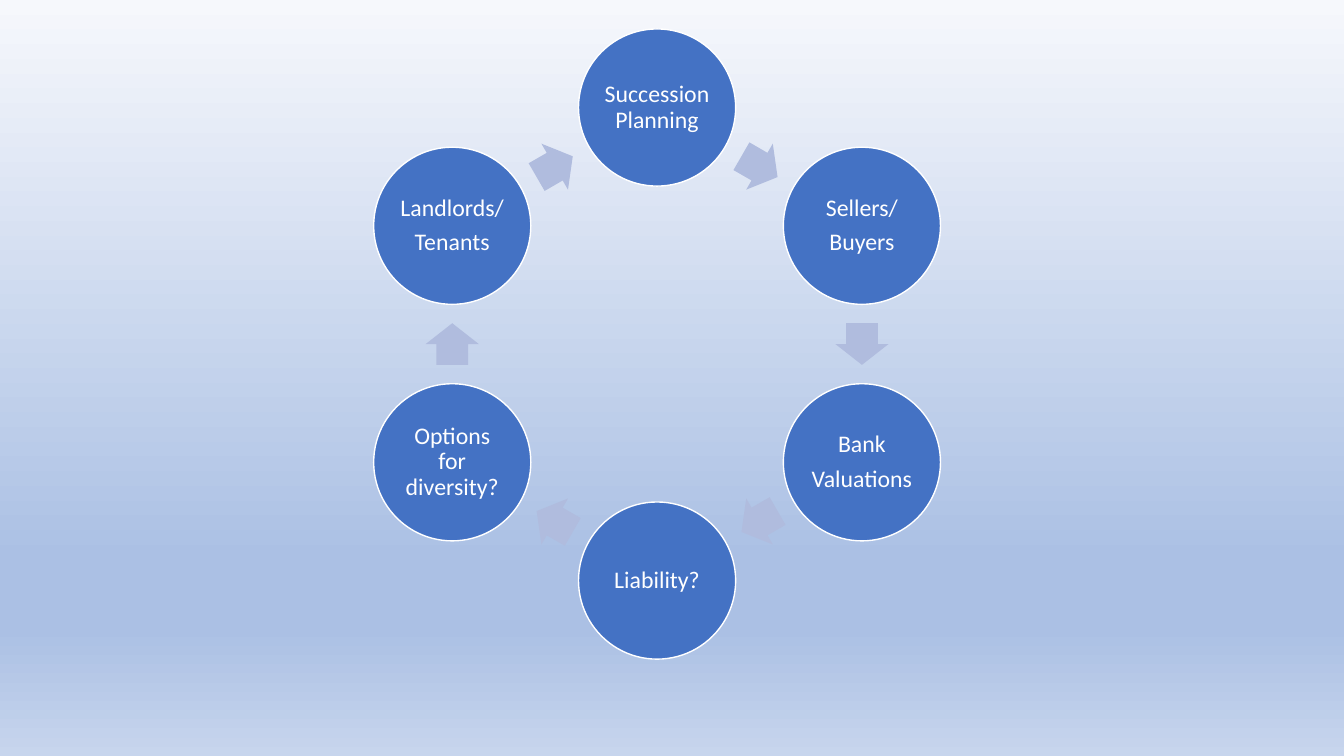
"""Build a slide with a six-step cycle of land ownership topics."""
from dataclasses import dataclass
from math import cos, radians, sin

from lxml.etree import SubElement
from pptx import Presentation
from pptx.dml.color import RGBColor
from pptx.enum.shapes import MSO_SHAPE
from pptx.enum.text import MSO_ANCHOR, PP_ALIGN
from pptx.oxml.ns import qn
from pptx.shapes.autoshape import Shape
from pptx.slide import Slide
from pptx.util import Cm, Pt

CENTER_X, CENTER_Y = 16.56, 8.67
RING_RADIUS = 5.96
TOPIC_SIZE = 3.96
ARROW_WIDTH, ARROW_HEIGHT = 1.05, 1.34
BACKGROUND_STOPS = {0: "F6F8FC", 74: "ABC0E4", 83: "ABC0E4", 100: "C7D5ED"}
FRAME_FORMAT = {
    "word_wrap": True,
    "vertical_anchor": MSO_ANCHOR.MIDDLE,
    **{f"margin_{side}": Cm(0.05) for side in ("left", "top", "right", "bottom")},
}
PARAGRAPH_FORMAT = {"alignment": PP_ALIGN.CENTER, "line_spacing": 0.9}
FONT_FORMAT = {"name": "Calibri", "size": Pt(17)}


@dataclass
class Topic:
    """One step of the cycle with its paragraphs."""
    paragraphs: tuple[str, ...]


TOPICS = [
    Topic(("Succession Planning",)),
    Topic(("Sellers/", "Buyers")),
    Topic(("Bank", "Valuations")),
    Topic(("Liability?",)),
    Topic(("Options for diversity?",)),
    Topic(("Landlords/", "Tenants")),
]
STEP_ANGLE = 360 / len(TOPICS)


def color(code: str) -> RGBColor:
    """Turn a hex string into a colour."""
    return RGBColor.from_string(code)


def apply_format(target: object, values: dict) -> None:
    """Set every attribute given in values on target."""
    for name, value in values.items():
        setattr(target, name, value)


def paint_background(slide: Slide) -> None:
    """Fill the slide with the vertical gradient."""
    fill = slide.background.fill
    fill.gradient()
    fill.gradient_angle = 270
    stops = slide.element.find(f".//{qn('a:gsLst')}")
    stops.clear()
    for percent, code in BACKGROUND_STOPS.items():
        stop = SubElement(stops, qn("a:gs"), pos=str(percent * 1000))
        SubElement(stop, qn("a:srgbClr"), val=str(color(code)))


def add_on_ring(slide: Slide, kind: MSO_SHAPE, angle: float, radius: float,
                width: float, height: float, fill: str) -> Shape:
    """Place a filled shape at a clockwise angle from the top of a ring."""
    x = CENTER_X + radius * sin(radians(angle))
    y = CENTER_Y - radius * cos(radians(angle))
    shape = slide.shapes.add_shape(
        kind, Cm(x - width / 2), Cm(y - height / 2), Cm(width), Cm(height))
    shape.shadow.inherit = False
    shape.fill.solid()
    shape.fill.fore_color.rgb = color(fill)
    return shape


def add_topic(slide: Slide, topic: Topic, angle: float) -> None:
    """Draw the circle of a topic with its text."""
    circle = add_on_ring(slide, MSO_SHAPE.OVAL, angle, RING_RADIUS,
                         TOPIC_SIZE, TOPIC_SIZE, "4472C4")
    circle.line.color.rgb = color("FFFFFF")
    circle.line.width = Pt(1)
    frame = circle.text_frame
    apply_format(frame, FRAME_FORMAT)
    frame.text = "\n".join(topic.paragraphs)
    for paragraph in frame.paragraphs:
        apply_format(paragraph, PARAGRAPH_FORMAT)
        apply_format(paragraph.font, FONT_FORMAT)
        paragraph.font.color.rgb = color("FFFFFF")
    for paragraph in frame.paragraphs[1:]:
        paragraph.space_before = Pt(6.5)


def add_arrow(slide: Slide, angle: float) -> None:
    """Draw the arrow halfway between two neighbouring topics."""
    arrow = add_on_ring(slide, MSO_SHAPE.RIGHT_ARROW, angle,
                        RING_RADIUS * cos(radians(STEP_ANGLE / 2)),
                        ARROW_WIDTH, ARROW_HEIGHT, "B0BCDE")
    arrow.line.fill.background()
    arrow.adjustments[0] = 0.6
    arrow.adjustments[1] = 0.5
    arrow.rotation = angle


def main() -> None:
    """Build and save the presentation."""
    presentation = Presentation()
    apply_format(presentation, {"slide_width": Cm(33.87), "slide_height": Cm(19.05)})
    slide = presentation.slides.add_slide(presentation.slide_layouts[6])
    paint_background(slide)
    for step, topic in enumerate(TOPICS):
        add_topic(slide, topic, step * STEP_ANGLE)
        add_arrow(slide, (step + 0.5) * STEP_ANGLE)
    presentation.save("out.pptx")


if __name__ == "__main__":
    main()
